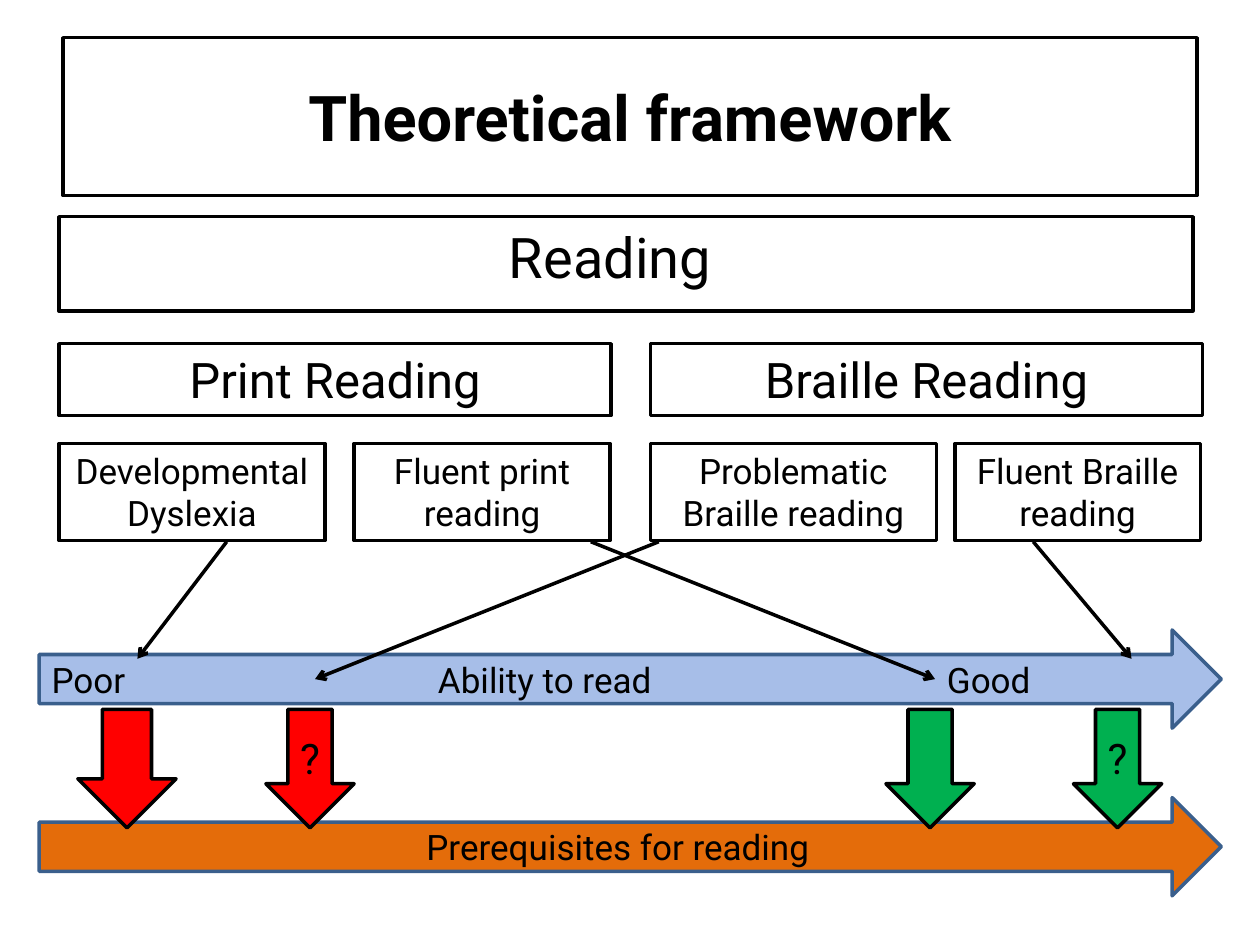
"""Build the slide on the theoretical framework of print and Braille reading."""
from lxml import etree
from pptx import Presentation
from pptx.dml.color import RGBColor
from pptx.enum.shapes import MSO_CONNECTOR, MSO_SHAPE
from pptx.enum.text import MSO_ANCHOR, PP_ALIGN
from pptx.oxml.ns import qn
from pptx.util import Cm, Pt

RECTANGLE = MSO_SHAPE.RECTANGLE
RIGHT_ARROW = MSO_SHAPE.RIGHT_ARROW
DOWN_ARROW = MSO_SHAPE.DOWN_ARROW
STRAIGHT = MSO_CONNECTOR.STRAIGHT
TOP, MIDDLE = MSO_ANCHOR.TOP, MSO_ANCHOR.MIDDLE
LEFT, CENTER = PP_ALIGN.LEFT, PP_ALIGN.CENTER

BLACK = RGBColor(0x00, 0x00, 0x00)
WHITE = RGBColor(0xFF, 0xFF, 0xFF)
LIGHT_BLUE = RGBColor(0xA7, 0xBE, 0xE8)
DARK_BLUE = RGBColor(0x3A, 0x5F, 0x8C)
ORANGE = RGBColor(0xE4, 0x6C, 0x0A)
RED = RGBColor(0xFF, 0x00, 0x00)
GREEN = RGBColor(0x00, 0xB0, 0x50)


def write(shape, text, size, anchor=MIDDLE, align=CENTER, bold=False):
    frame = shape.text_frame
    frame.text = text
    frame.word_wrap = True
    frame.vertical_anchor = anchor
    for para in frame.paragraphs:
        para.alignment = align
        for span in para.runs:
            span.font.name = "Roboto"
            span.font.size = Pt(size)
            span.font.bold = bold
            span.font.color.rgb = BLACK


def add_box(page, kind, left, top, width, height, fill=WHITE, line=BLACK):
    box = page.shapes.add_shape(kind, Cm(left), Cm(top), Cm(width), Cm(height))
    box.shadow.inherit = False
    box.fill.solid()
    box.fill.fore_color.rgb = fill
    box.line.color.rgb = line
    box.line.width = Pt(2)
    return box


deck = Presentation()
deck.slide_width, deck.slide_height = Cm(25.4), Cm(19.05)
page = deck.slides.add_slide(deck.slide_layouts[5])

title = page.shapes.title
title.left, title.top, title.width, title.height = Cm(1.27), Cm(0.76), Cm(22.86), Cm(3.18)
title.fill.solid()
title.fill.fore_color.rgb = WHITE
title.line.color.rgb = BLACK
title.line.width = Pt(2)
write(title, "Theoretical framework", 36, bold=True)

reading = add_box(page, RECTANGLE, 1.19, 4.37, 22.86, 1.9)
write(reading, "Reading", 32, TOP)
reading.text_frame.margin_right = Cm(0.89)

for left, text in [(1.19, "Print Reading"), (13.11, "Braille Reading")]:
    box = add_box(page, RECTANGLE, left, 6.93, 11.13, 1.45)
    write(box, text, 28, TOP)

reader_groups = [
    (1.19, 5.36, "Developmental Dyslexia"),
    (7.14, 5.16, "Fluent print\nreading"),
    (13.11, 5.77, "Problematic Braille reading"),
    (19.25, 4.95, "Fluent Braille reading"),
]
for left, width, text in reader_groups:
    box = add_box(page, RECTANGLE, left, 8.94, width, 1.96)
    write(box, text, 20, TOP)

ability = add_box(page, RIGHT_ARROW, 0.79, 12.7, 23.83, 1.98, LIGHT_BLUE, DARK_BLUE)
write(ability, "Poor\tAbility to read\tGood", 20, align=LEFT)
properties = ability.text_frame.paragraphs[0]._p.get_or_add_pPr()
tab_list = etree.SubElement(properties, qn("a:tabLst"))
for position in (7.79, 18.05):
    etree.SubElement(tab_list, qn("a:tab"), pos=str(Cm(position)), algn="l")

prerequisites = add_box(page, RIGHT_ARROW, 0.79, 16.08, 23.83, 1.98, ORANGE, DARK_BLUE)
write(prerequisites, "Prerequisites for reading", 20)

ability_links = [
    (4.57, 2.77, 13.28),
    (11.91, 18.85, 13.69),
    (20.83, 22.81, 13.28),
    (13.28, 6.35, 13.69),
]
for start, end, bottom in ability_links:
    link = page.shapes.add_connector(STRAIGHT, Cm(start), Cm(10.92), Cm(end), Cm(bottom))
    link.line.color.rgb = BLACK
    link.line.width = Pt(2)
    etree.SubElement(link.line._get_or_add_ln(), qn("a:tailEnd"), type="arrow")
    etree.SubElement(link._element.spPr, qn("a:effectLst"))

down_arrows = [
    (1.57, 1.98, RED, ""),
    (17.86, 1.78, GREEN, ""),
    (5.36, 1.78, RED, "?"),
    (21.64, 1.78, GREEN, "?"),
]
for left, width, color, text in down_arrows:
    arrow = add_box(page, DOWN_ARROW, left, 14.3, width, 2.39, color)
    if text:
        write(arrow, text, 24)
        arrow.text_frame.margin_left = arrow.text_frame.margin_right = 0

deck.save("out.pptx")
